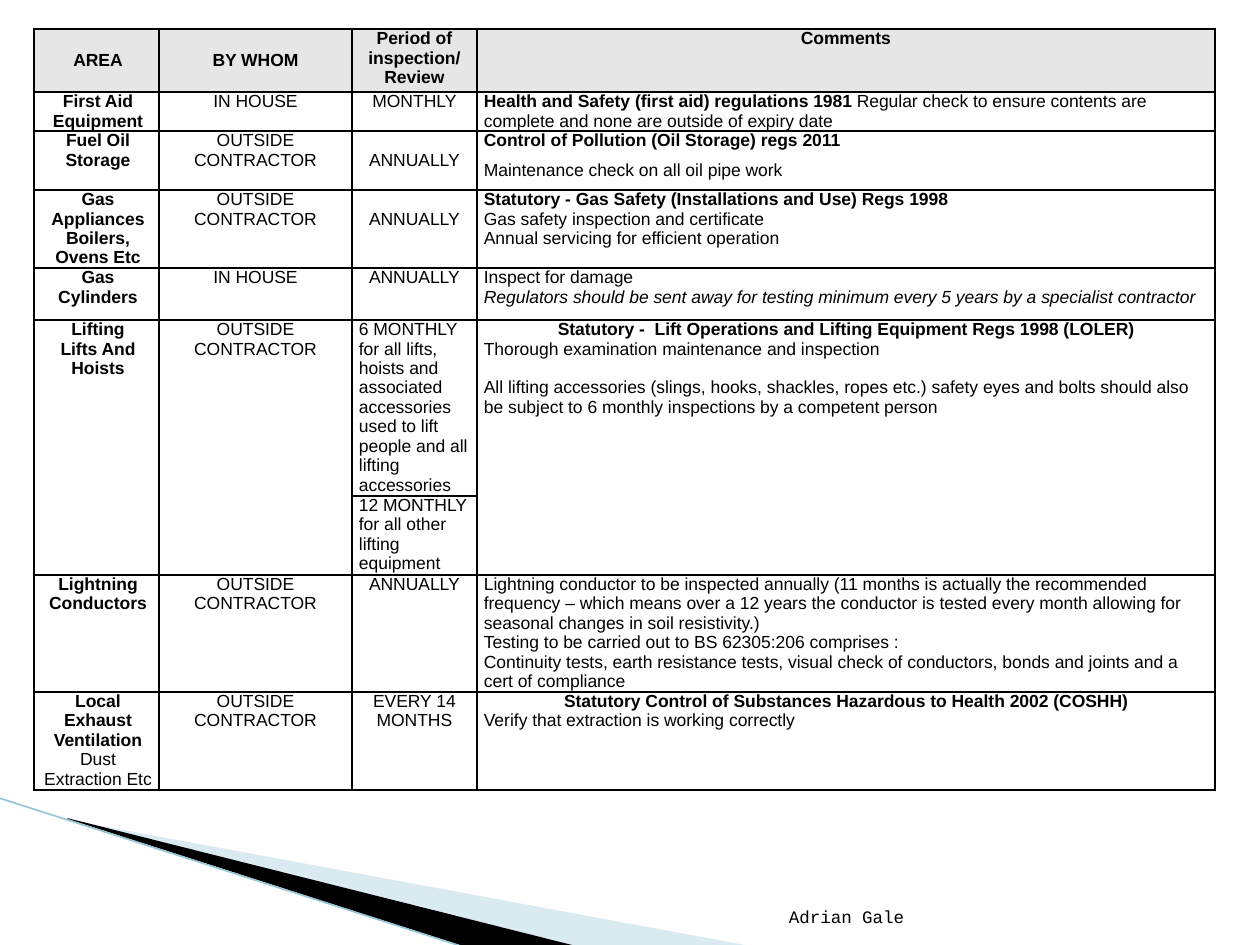
from lxml.etree import SubElement
from pptx import Presentation
from pptx.dml.color import RGBColor
from pptx.enum.shapes import MSO_CONNECTOR as Connector
from pptx.enum.text import MSO_ANCHOR as Anchor, PP_ALIGN as Align
from pptx.oxml.ns import qn
from pptx.util import Emu, Pt

PX = 914400 // 126
BODY_FONT, FOOTER_FONT = "Arial", "Courier New"
BLACK, HEADER_GREY, PALE_BLUE, LINE_BLUE = "000000", "E6E6E6", "A0CBDC", "97C5D8"


# A paragraph is (alignment, space after in points, (text, style), ...)
def centred(text, style=""):
    return ("center", 0, (text, style))


def left(text, style="", after=0):
    return ("left", after, (text, style))


HEADERS = ["AREA", "BY WHOM", "Period of inspection/ Review", "Comments"]
OUTSIDE, IN_HOUSE = "OUTSIDE CONTRACTOR", "IN HOUSE"

# Area paragraphs, by whom, period paragraph, lines above the period, comments
ROWS = [
    ([centred("First Aid Equipment", "b")], IN_HOUSE, centred("MONTHLY"), 0,
     [("left", 0, ("Health and Safety (first aid) regulations 1981 ", "b"),
       ("Regular check to ensure contents are complete and none are outside of expiry date", ""))]),
    ([centred("Fuel Oil Storage", "b")], OUTSIDE, centred("ANNUALLY"), 1,
     [left("Control of Pollution (Oil Storage) regs 2011", "b", 6),
      left("Maintenance check on all oil pipe work")]),
    ([centred("Gas Appliances", "b"), centred("Boilers, Ovens Etc", "b")],
     OUTSIDE, centred("ANNUALLY"), 1,
     [left("Statutory - Gas Safety (Installations and Use) Regs 1998", "b"),
      left("Gas safety inspection and certificate"),
      left("Annual servicing for efficient operation")]),
    ([centred("Gas Cylinders", "b")], IN_HOUSE, centred("ANNUALLY"), 0,
     [left("Inspect for damage"),
      left("Regulators should be sent away for testing minimum every 5 years "
           "by a specialist contractor", "i")]),
    ([centred("Lifting", "b"), centred("Lifts And Hoists", "b")], OUTSIDE,
     left("6 MONTHLY for all lifts, hoists and associated accessories used to lift "
          "people and all lifting accessories"), 0,
     [centred("Statutory -  Lift Operations and Lifting Equipment Regs 1998 (LOLER)", "b"),
      left("Thorough examination maintenance and inspection", after=11),
      left("All lifting accessories (slings, hooks, shackles, ropes etc.) safety eyes and "
           "bolts should also be subject to 6 monthly inspections by a competent person")]),
    ([], "", left("12 MONTHLY for all other lifting equipment"), 0, []),
    ([centred("Lightning Conductors", "b")], OUTSIDE, centred("ANNUALLY"), 0,
     [left("Lightning conductor to be inspected annually (11 months is actually the "
           "recommended frequency – which means over a 12 years the conductor is tested "
           "every month allowing for seasonal changes in soil resistivity.)"),
      left("Testing to be carried out to BS 62305:206 comprises :"),
      left("Continuity tests, earth resistance tests, visual check of conductors, bonds "
           "and joints and a cert of compliance")]),
    ([centred("Local Exhaust Ventilation", "b"), centred("Dust Extraction Etc")],
     OUTSIDE, centred("EVERY 14 MONTHS"), 0,
     [centred("Statutory Control of Substances Hazardous to Health 2002 (COSHH)", "b"),
      left("Verify that extraction is working correctly")]),
]
TABLE_LEFT, TABLE_TOP = 34, 29
COLUMN_WIDTHS = [125, 193, 125, 738]
ROW_HEIGHTS = [63, 39, 59, 78, 52, 176, 79, 117, 98]
LIFTING_ROW = 5
SIDE_MARGIN, AREA_INDENT, LINE_HEIGHT = 7, 3, 20
LINE_SPACING = Pt(11.1)  # fixed, so that the text fits the row heights

# Corner wedges: colour, opacity in percent, outline
WEDGES = [
    (PALE_BLUE, 40, [(69, 820), (750, 946), (575, 946), (69, 819)]),
    (BLACK, 100, [(67, 818), (576, 946), (469, 948), (68, 819)]),
]
EDGE_LINE = (-1, 798, 467, 948)


def px(value):
    return Emu(value * PX)


def colour(value):
    return RGBColor.from_string(value)


def write(frame, paragraphs, font=BODY_FONT, indent=0):
    for index, (alignment, after, *runs) in enumerate(paragraphs):
        paragraph = frame.paragraphs[0] if index == 0 else frame.add_paragraph()
        paragraph.alignment = getattr(Align, alignment.upper())
        paragraph.line_spacing = LINE_SPACING
        if after:
            paragraph.space_after = Pt(after)
        if indent:
            paragraph._p.get_or_add_pPr().set("marL", str(px(indent)))
        for text, style in runs:
            run = paragraph.add_run()
            run.text = text
            run.font.name, run.font.size = font, Pt(10)
            run.font.bold, run.font.italic = "b" in style, "i" in style
            run.font.color.rgb = colour(BLACK)


def add_borders(cell):
    properties = cell._tc.get_or_add_tcPr()
    for side in ("a:lnL", "a:lnR", "a:lnT", "a:lnB"):
        line = SubElement(properties, qn(side), w=str(Pt(1)))
        fill = SubElement(line, qn("a:solidFill"))
        SubElement(fill, qn("a:srgbClr"), val=BLACK)


presentation = Presentation()
presentation.slide_width, presentation.slide_height = px(1260), px(945)
slide = presentation.slides.add_slide(presentation.slide_layouts[6])
shapes = slide.shapes

# Corner decoration
for wedge_colour, opacity, points in WEDGES:
    builder = shapes.build_freeform(*points[0], scale=PX)
    builder.add_line_segments(points[1:], close=True)
    wedge = builder.convert_to_shape()
    wedge.shadow.inherit = False
    wedge.fill.solid()
    wedge.fill.fore_color.rgb = colour(wedge_colour)
    wedge.line.fill.background()
    if opacity < 100:
        tint = wedge._element.spPr.find(qn("a:solidFill"))[0]
        SubElement(tint, qn("a:alpha"), val=str(opacity * 1000))

edge = shapes.add_connector(Connector.STRAIGHT, *map(px, EDGE_LINE))
edge.line.color.rgb = colour(LINE_BLUE)
edge.line.width = Pt(0.95)
SubElement(edge._element.spPr, qn("a:effectLst"))

# Footer name
footer = shapes.add_textbox(px(604), px(883), px(323), px(50)).text_frame
footer.word_wrap = True
footer.vertical_anchor = Anchor.BOTTOM
footer.margin_right = px(23)
write(footer, [("right", 0, ("Adrian Gale", ""))], FOOTER_FONT)

# Inspection table
table = shapes.add_table(
    len(ROW_HEIGHTS), len(COLUMN_WIDTHS), px(TABLE_LEFT), px(TABLE_TOP),
    px(sum(COLUMN_WIDTHS)), px(sum(ROW_HEIGHTS))).table
table.first_row = table.horz_banding = False
for column, width in zip(table.columns, COLUMN_WIDTHS):
    column.width = px(width)
for row, height in zip(table.rows, ROW_HEIGHTS):
    row.height = px(height)

grid = [[[centred(header, "b")] for header in HEADERS]]
for area, by_whom, period, _, comments in ROWS:
    grid.append([area, [centred(by_whom)] if by_whom else [], [period], comments])

for row_index, contents in enumerate(grid):
    for column_index, paragraphs in enumerate(contents):
        cell = table.cell(row_index, column_index)
        cell.margin_left = cell.margin_right = px(SIDE_MARGIN)
        cell.margin_top = cell.margin_bottom = 0
        add_borders(cell)
        if row_index == 0:
            cell.fill.solid()
            cell.fill.fore_color.rgb = colour(HEADER_GREY)
            if column_index < 2:
                cell.vertical_anchor = Anchor.MIDDLE
        else:
            cell.fill.background()
            if column_index == 2:
                cell.margin_top = px(ROWS[row_index - 1][3] * LINE_HEIGHT)
        write(cell.text_frame, paragraphs, indent=AREA_INDENT if column_index == 0 else 0)

# Lifting entries span both inspection periods
for column_index in (0, 1, 3):
    table.cell(LIFTING_ROW, column_index).merge(table.cell(LIFTING_ROW + 1, column_index))

presentation.save("out.pptx")
